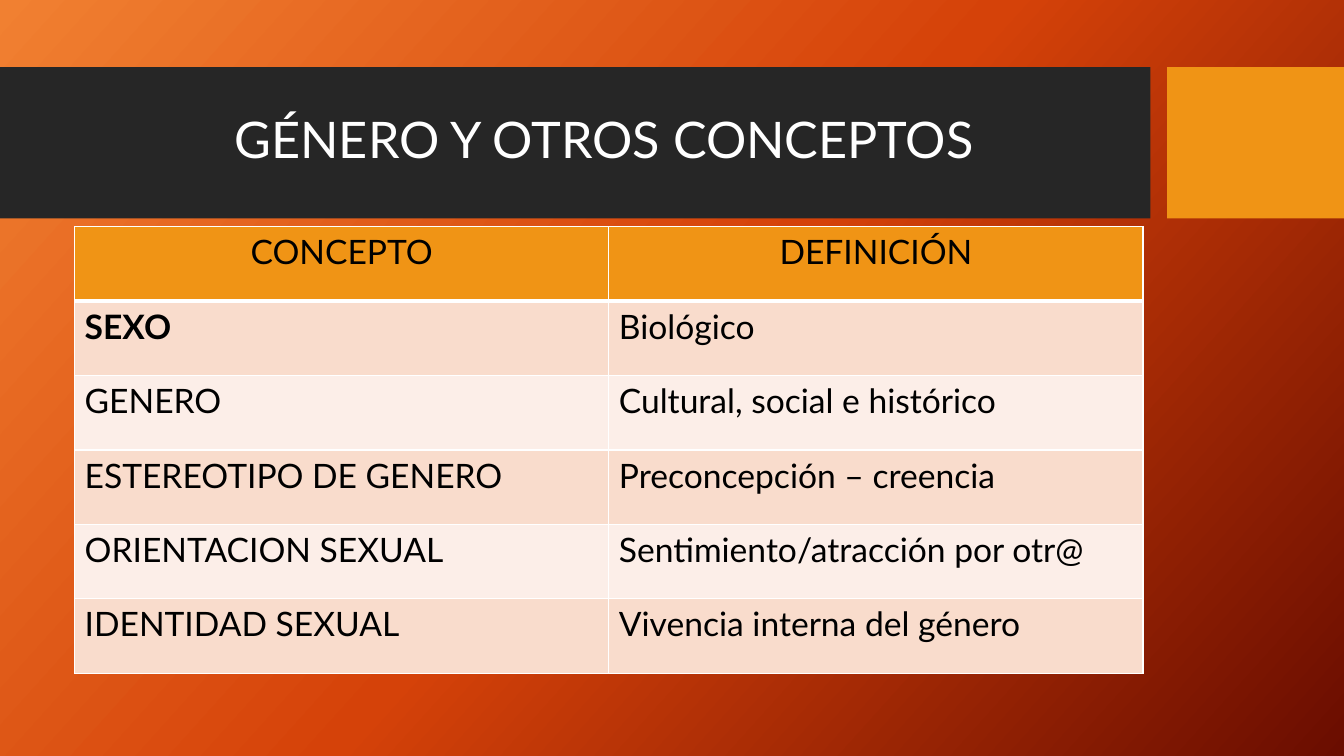
import copy

import lxml.etree
import pptx
import pptx.dml.color
import pptx.enum.shapes
import pptx.enum.text
import pptx.oxml
import pptx.oxml.ns
import pptx.util

Pt = pptx.util.Pt
qn = pptx.oxml.ns.qn
CENTER = pptx.enum.text.PP_ALIGN.CENTER
LEFT = pptx.enum.text.PP_ALIGN.LEFT


def rgb(value):
    return pptx.dml.color.RGBColor.from_string(value)


class ConceptSlide:
    font = "Lato"
    white, black = "FFFFFF", "000000"
    charcoal, amber = "262626", "F09415"
    stripes = ("F9DCCC", "FCEEE8")
    backdrop = ((0, "F18031"), (0.5, "D54209"), (1, "6A0D00"))

    def __init__(self, deck):
        self.slide = deck.slides.add_slide(deck.slide_layouts[5])

    def style(self, paragraph, size, color, align, bold=False):
        paragraph.alignment = align
        paragraph.font.name = self.font
        paragraph.font.size = Pt(size)
        paragraph.font.bold = bold
        paragraph.font.color.rgb = rgb(color)

    def background(self, angle):
        fill = self.slide.background.fill
        fill.gradient()
        fill.gradient_angle = angle
        stops = next(self.slide.element.iter(qn("a:gsLst")))
        stops.insert(1, copy.deepcopy(stops[0]))
        for stop, (position, color) in zip(fill.gradient_stops, self.backdrop):
            stop.position = position
            stop.color.rgb = rgb(color)

    def band(self, left, top, width, height, color):
        band = self.slide.shapes.add_shape(
            pptx.enum.shapes.MSO_SHAPE.RECTANGLE, Pt(left), Pt(top), Pt(width), Pt(height))
        band.shadow.inherit = False
        band.fill.solid()
        band.fill.fore_color.rgb = rgb(color)
        band.line.fill.background()

    def title(self, text, left, top, width, height):
        heading = self.slide.shapes.title
        heading.left, heading.top = Pt(left), Pt(top)
        heading.width, heading.height = Pt(width), Pt(height)
        frame = heading.text_frame
        frame.text = text
        frame.word_wrap = True
        frame.auto_size = pptx.enum.text.MSO_AUTO_SIZE.NONE
        frame.vertical_anchor = pptx.enum.text.MSO_ANCHOR.MIDDLE
        frame.paragraphs[0].line_spacing = 0.9
        self.style(frame.paragraphs[0], 36, self.white, CENTER)
        self.slide.shapes.element.append(heading.element)

    def borders(self, cell, top, bottom):
        properties = cell._tc.get_or_add_tcPr()
        for side, weight in (("L", 1), ("R", 1), ("T", top), ("B", bottom)):
            edge = lxml.etree.SubElement(properties, qn(f"a:ln{side}"), w=str(Pt(weight)))
            solid = lxml.etree.SubElement(edge, qn("a:solidFill"))
            lxml.etree.SubElement(solid, qn("a:srgbClr"), val=self.white)

    def table(self, rows, left, top, width, row_height):
        table = self.slide.shapes.add_table(
            len(rows), len(rows[0]), Pt(left), Pt(top),
            Pt(width), Pt(row_height * len(rows))).table
        table.horz_banding = False
        for r, row in enumerate(rows):
            header = r == 0
            for c, text in enumerate(row):
                cell = table.cell(r, c)
                self.borders(cell, 3 if r == 1 else 1, 3 if header else 1)
                cell.fill.solid()
                cell.fill.fore_color.rgb = rgb(self.amber if header else self.stripes[(r - 1) % 2])
                cell.text = text
                self.style(cell.text_frame.paragraphs[0], 24, self.black,
                           CENTER if header else LEFT, bold=(r, c) == (1, 0))


def main():
    concepts = (
        ("CONCEPTO", "DEFINICIÓN"),
        ("SEXO", "Biológico"),
        ("GENERO", "Cultural, social e histórico"),
        ("ESTEREOTIPO DE GENERO", "Preconcepción – creencia"),
        ("ORIENTACION SEXUAL", "Sentimiento/atracción por otr@"),
        ("IDENTIDAD SEXUAL", "Vivencia interna del género"),
    )
    deck = pptx.Presentation()
    deck.slide_width, deck.slide_height = Pt(960), Pt(540)
    page = ConceptSlide(deck)
    page.background(318)
    page.band(0, 48, 821.7, 108, page.charcoal)
    page.band(833.7, 48, 126.3, 108, page.amber)
    page.title("GÉNERO Y OTROS CONCEPTOS", 53.3, 59, 756.7, 85)
    page.table(concepts, 53.3, 162, 763.2, 53.16)
    deck.save("out.pptx")


if __name__ == "__main__":
    main()
